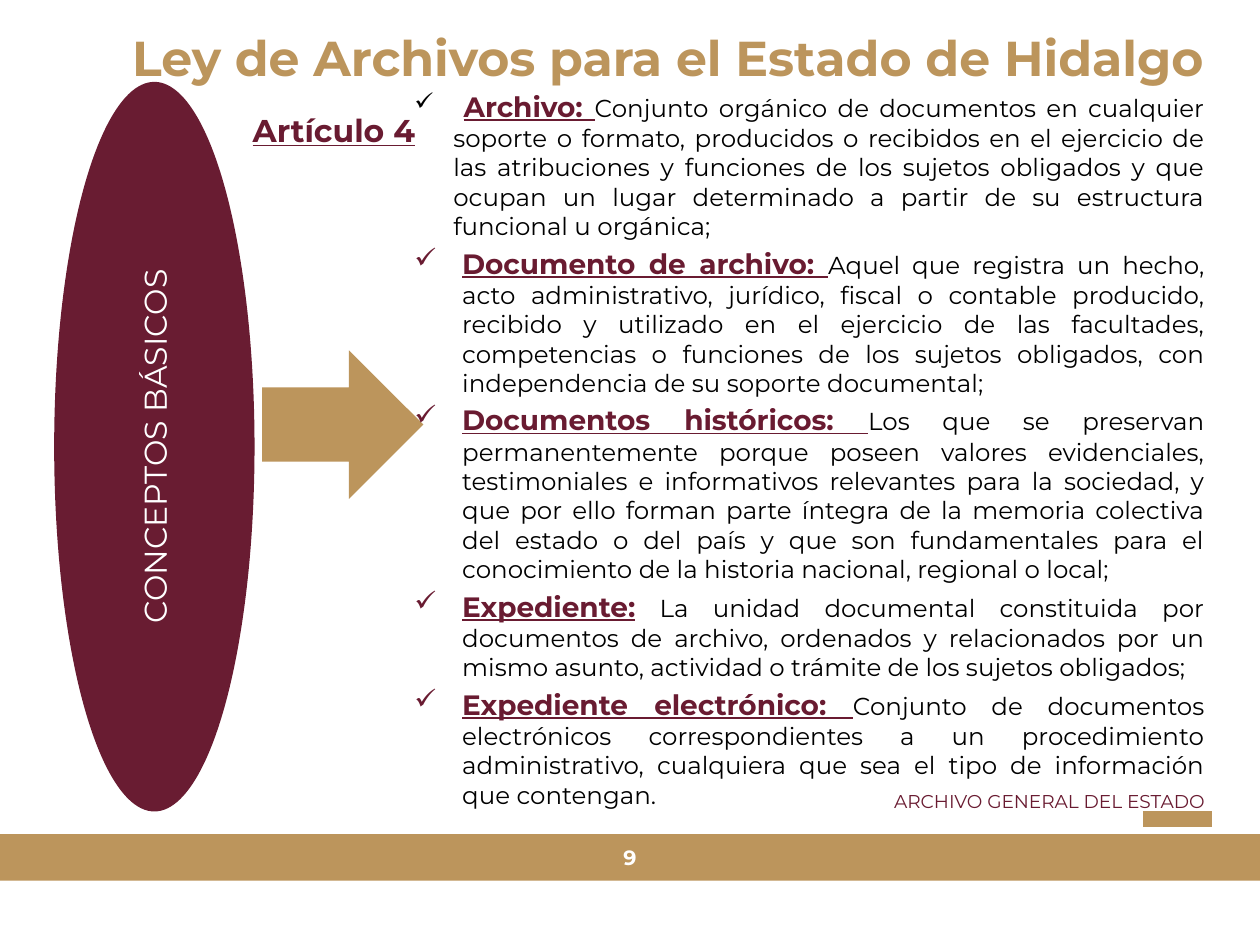
from dataclasses import dataclass

from lxml import etree
from pptx import Presentation
from pptx.dml.color import RGBColor
from pptx.enum.shapes import MSO_CONNECTOR, MSO_SHAPE
from pptx.enum.text import MSO_ANCHOR, MSO_AUTO_SIZE, PP_ALIGN
from pptx.oxml.ns import qn
from pptx.util import Inches, Pt

LEFT, CENTER, RIGHT, JUSTIFY = PP_ALIGN.LEFT, PP_ALIGN.CENTER, PP_ALIGN.RIGHT, PP_ALIGN.JUSTIFY
TOP, MIDDLE = MSO_ANCHOR.TOP, MSO_ANCHOR.MIDDLE
TITLE_ONLY = 5
FONT = "Montserrat"
GOLD, WINE, DARK_WINE, WHITE, BLACK = "BC955C", "691B31", "691C32", "FFFFFF", "000000"


@dataclass
class Box:
    left: float
    top: float
    width: float
    height: float

    def lengths(self) -> tuple:
        return tuple(Inches(v) for v in (self.left, self.top, self.width, self.height))


@dataclass
class Concept:
    term: str
    definition: str
    indent: float = 0.38
    lead: str = ""


CONCEPTS = [
    Concept("Archivo: ", "Conjunto orgánico de documentos en cualquier soporte o formato, "
            "producidos o recibidos en el ejercicio de las atribuciones y funciones de los "
            "sujetos obligados y que ocupan un lugar determinado a partir de su estructura "
            "funcional u orgánica;", indent=0.31, lead=" "),
    Concept("Documento de archivo: ", "Aquel que registra un hecho, acto administrativo, "
            "jurídico, fiscal o contable producido, recibido y utilizado en el ejercicio de las "
            "facultades, competencias o funciones de los sujetos obligados, con independencia "
            "de su soporte documental;"),
    Concept("Documentos históricos: ", "Los que se preservan permanentemente porque poseen "
            "valores evidenciales, testimoniales e informativos relevantes para la sociedad, y "
            "que por ello forman parte íntegra de la memoria colectiva del estado o del país y "
            "que son fundamentales para el conocimiento de la historia nacional, regional o "
            "local;"),
    Concept("Expediente:", " La unidad documental constituida por documentos de archivo, "
            "ordenados y relacionados por un mismo asunto, actividad o trámite de los sujetos "
            "obligados;"),
    Concept("Expediente electrónico: ", "Conjunto de documentos electrónicos correspondientes a "
            "un procedimiento administrativo, cualquiera que sea el tipo de información que "
            "contengan."),
]


def color(value: str) -> RGBColor:
    return RGBColor.from_string(value)


def set_all(target, values: dict) -> None:
    for name, value in values.items():
        setattr(target, name, value)


def add_run(paragraph, text: str, size: float, hex_color: str, **font_format) -> None:
    run = paragraph.add_run()
    run.text = text
    set_all(run.font, {"name": FONT, "size": Pt(size), "bold": False, **font_format})
    run.font.color.rgb = color(hex_color)


def format_frame(shape, anchor=TOP, margins=(0.1, 0.05)):
    horizontal, vertical = (Inches(m) for m in margins)
    frame = shape.text_frame
    set_all(frame, {
        "word_wrap": True, "auto_size": MSO_AUTO_SIZE.NONE, "vertical_anchor": anchor,
        "margin_left": horizontal, "margin_right": horizontal,
        "margin_top": vertical, "margin_bottom": vertical,
    })
    return frame


def write_line(shape, text: str, size: float, hex_color: str, align=CENTER, spacing=1.0,
               anchor=TOP, margins=(0.1, 0.05), **font_format) -> None:
    paragraph = format_frame(shape, anchor, margins).paragraphs[0]
    set_all(paragraph, {"alignment": align, "line_spacing": spacing, "space_before": Pt(0)})
    add_run(paragraph, text, size, hex_color, **font_format)


def add_filled(slide, preset, box: Box, hex_color: str):
    shape = slide.shapes.add_shape(preset, *box.lengths())
    shape.shadow.inherit = False
    shape.fill.solid()
    shape.fill.fore_color.rgb = color(hex_color)
    shape.line.fill.background()
    return shape


def add_text_box(slide, box: Box):
    return slide.shapes.add_textbox(*box.lengths())


def add_rule(slide, start: tuple, end: tuple, hex_color: str, width: float) -> None:
    rule = slide.shapes.add_connector(
        MSO_CONNECTOR.STRAIGHT, *(Inches(v) for v in (*start, *end)))
    rule.line.color.rgb = color(hex_color)
    rule.line.width = Pt(width)
    etree.SubElement(rule._element.spPr, qn("a:effectLst"))


def add_check_bullet(paragraph, indent: float) -> None:
    properties = paragraph._p.get_or_add_pPr()
    properties.set("marL", str(Inches(indent)))
    properties.set("indent", str(-Inches(indent)))
    etree.SubElement(properties, qn("a:buChar")).set("char", "✓")


def add_concepts(slide, box: Box, concepts: list[Concept]) -> None:
    frame = format_frame(add_text_box(slide, box))
    for index, concept in enumerate(concepts):
        paragraph = frame.add_paragraph() if index else frame.paragraphs[0]
        set_all(paragraph, {"alignment": JUSTIFY, "space_before": Pt(3.2)})
        add_check_bullet(paragraph, concept.indent)
        if concept.lead:
            add_run(paragraph, concept.lead, 14, BLACK)
        add_run(paragraph, concept.term, 16, WINE, bold=True, underline=True)
        add_run(paragraph, concept.definition, 14, BLACK)


def main() -> None:
    presentation = Presentation()
    set_all(presentation, {"slide_width": Inches(10), "slide_height": Inches(7.5)})
    slide = presentation.slides.add_slide(presentation.slide_layouts[TITLE_ONLY])

    # Footer band, page number and institution
    add_filled(slide, MSO_SHAPE.RECTANGLE, Box(-0.02, 6.62, 10.06, 0.37), GOLD)
    write_line(add_text_box(slide, Box(4.76, 6.63, 0.48, 0.37)), "9", 11.8, WHITE,
               spacing=0.9, anchor=MIDDLE, margins=(0.1, 0.1), bold=True)
    write_line(add_text_box(slide, Box(4.57, 6.23, 5.05, 0.28)), "ARCHIVO GENERAL DEL ESTADO",
               10.6, WINE, align=RIGHT, spacing=0.9, margins=(0.06, 0.06))
    add_rule(slide, (9.07, 6.5), (9.62, 6.5), GOLD, 9)

    # Title
    title = slide.shapes.title
    title.left, title.top, title.width, title.height = Box(0.77, 0.18, 9.06, 0.56).lengths()
    write_line(title, "Ley de Archivos para el Estado de Hidalgo", 28, GOLD,
               margins=(0.09, 0.04), bold=True)

    # Topic ellipse with upward text, and arrow to the definitions
    ellipse = add_filled(slide, MSO_SHAPE.OVAL, Box(0.43, 0.65, 1.59, 5.79), DARK_WINE)
    write_line(ellipse, "CONCEPTOS BÁSICOS", 18, WHITE, anchor=MIDDLE, margins=(0.08, 0.04))
    ellipse.text_frame._txBody.bodyPr.set("vert", "vert270")
    add_filled(slide, MSO_SHAPE.RIGHT_ARROW, Box(2.08, 2.78, 1.28, 1.18), GOLD)

    # Definitions and article
    add_concepts(slide, Box(3.19, 0.66, 6.47, 5.9), CONCEPTS)
    write_line(add_text_box(slide, Box(1.6, 0.83, 2.1, 0.4)), "Artículo 4", 18, WINE,
               bold=True, underline=True)

    presentation.save("out.pptx")


if __name__ == "__main__":
    main()
